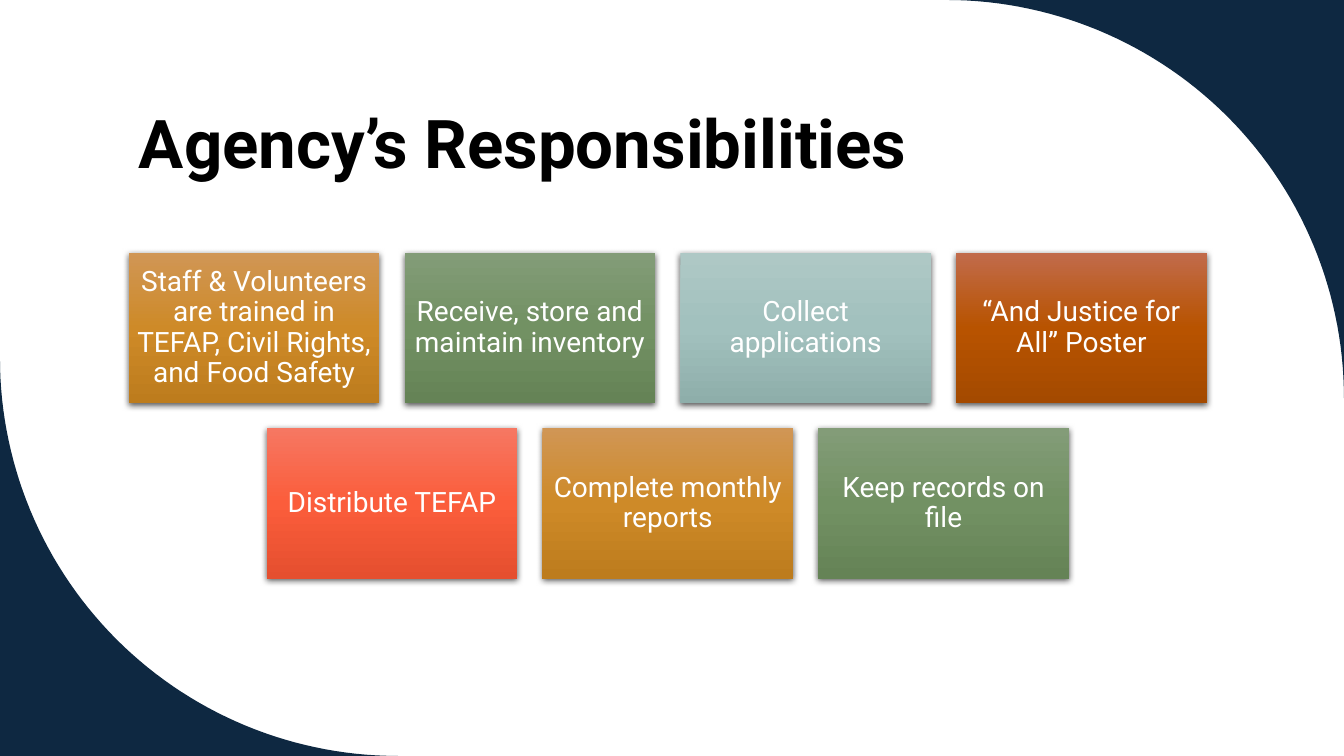
from copy import deepcopy
from dataclasses import dataclass
from math import cos, pi, sin

from lxml import etree
from pptx import Presentation
from pptx import util as u
from pptx.dml.color import RGBColor
from pptx.enum import shapes, text
from pptx.oxml.ns import qn


@dataclass(frozen=True)
class Theme:
    font: str = "Roboto"
    title_size: int = 48
    card_size: int = 20
    line_spacing: float = 0.9
    title: str = "000000"
    card_text: str = "FFFFFF"
    corner: str = "0E2841"
    shadow: str = "000000"
    # Card gradients, top to bottom
    amber: tuple[str, ...] = ("D09655", "CE8A28", "BD7C1D")
    green: tuple[str, ...] = ("839C78", "729163", "658356")
    teal: tuple[str, ...] = ("AEC8C5", "A2C1BE", "8EAEAA")
    rust: tuple[str, ...] = ("C16B4B", "B85300", "A44A00")
    coral: tuple[str, ...] = ("F67762", "FB5D3B", "E54F2F")


@dataclass(frozen=True)
class Card:
    label: str
    gradient: tuple[str, ...]


@dataclass(frozen=True)
class Corner:
    x: float  # outer corner of the slide
    y: float
    inward_x: int  # direction towards the slide centre
    inward_y: int


THEME = Theme()

# Sizes in centimetres
SLIDE_W, SLIDE_H = 33.87, 19.05
CORNER_RADIUS, ARC_STEPS = 10.03, 60
CARD_W, CARD_H, CARD_GAP = 6.32, 3.79, 0.63
CARDS_TOP, CARDS_CENTRE = 6.37, 16.83
CARD_INSET = 0.2

CORNERS = [Corner(SLIDE_W, 0, -1, 1), Corner(0, SLIDE_H, 1, -1)]

ROWS = [
    [
        Card("Staff & Volunteers are trained in TEFAP, Civil Rights, and Food Safety", THEME.amber),
        Card("Receive, store and maintain inventory", THEME.green),
        Card("Collect applications", THEME.teal),
        Card("“And Justice for All” Poster", THEME.rust),
    ],
    [
        Card("Distribute TEFAP", THEME.coral),
        Card("Complete monthly reports", THEME.amber),
        Card("Keep records on file", THEME.green),
    ],
]


def write_text(tf, label: str, size: int, color: str, align, anchor, bold: bool = False) -> None:
    tf.word_wrap = True
    tf.vertical_anchor = anchor
    p = tf.paragraphs[0]
    p.text = label
    p.alignment = align
    p.line_spacing = THEME.line_spacing
    p.font.name = THEME.font
    p.font.size = u.Pt(size)
    p.font.bold = bold
    p.font.color.rgb = RGBColor.from_string(color)


def set_gradient(sp, colors: tuple[str, ...]) -> None:
    sp.fill.gradient()
    sp.fill.gradient_angle = 270
    stop_list = sp._element.spPr.find(".//" + qn("a:gsLst"))
    while len(stop_list) < len(colors):
        stop_list.append(deepcopy(stop_list[0]))
    for i, (stop, color) in enumerate(zip(sp.fill.gradient_stops, colors)):
        stop.position = i / (len(colors) - 1)
        stop.color.rgb = RGBColor.from_string(color)


def set_shadow(sp) -> None:
    sp.shadow.inherit = False
    effects = sp._element.spPr.find(qn("a:effectLst"))
    shadow = etree.SubElement(
        effects, qn("a:outerShdw"), blurRad=str(u.Pt(4.5)), dist=str(u.Pt(1.5)),
        dir="5400000", algn="ctr", rotWithShape="0",
    )
    color = etree.SubElement(shadow, qn("a:srgbClr"), val=THEME.shadow)
    etree.SubElement(color, qn("a:alpha"), val="63000")


def draw_corner(s, corner: Corner) -> None:
    """Fill the area between a slide corner and a quarter circle."""
    angles = [pi / 2 * i / ARC_STEPS for i in range(ARC_STEPS + 1)]
    arc = [
        (u.Cm(corner.x + corner.inward_x * CORNER_RADIUS * (1 - sin(a))),
         u.Cm(corner.y + corner.inward_y * CORNER_RADIUS * (1 - cos(a))))
        for a in angles
    ]
    builder = s.shapes.build_freeform(u.Cm(corner.x), u.Cm(corner.y))
    builder.add_line_segments(arc, close=True)
    sp = builder.convert_to_shape()
    sp.shadow.inherit = False
    sp.fill.solid()
    sp.fill.fore_color.rgb = RGBColor.from_string(THEME.corner)
    sp.line.fill.background()


def draw_card(s, card: Card, left: float, top: float) -> None:
    sp = s.shapes.add_shape(
        shapes.MSO_SHAPE.RECTANGLE, u.Cm(left), u.Cm(top), u.Cm(CARD_W), u.Cm(CARD_H)
    )
    set_gradient(sp, card.gradient)
    sp.line.fill.background()
    set_shadow(sp)
    tf = sp.text_frame
    tf.margin_left = tf.margin_right = tf.margin_top = tf.margin_bottom = u.Cm(CARD_INSET)
    write_text(tf, card.label, THEME.card_size, THEME.card_text,
               text.PP_ALIGN.CENTER, text.MSO_ANCHOR.MIDDLE)


def main() -> None:
    prs = Presentation()
    prs.slide_width, prs.slide_height = u.Cm(SLIDE_W), u.Cm(SLIDE_H)
    s = prs.slides.add_slide(prs.slide_layouts[6])

    # Rounded corners
    for corner in CORNERS:
        draw_corner(s, corner)

    # Title
    title = s.shapes.add_textbox(u.Cm(3.25), u.Cm(1.07), u.Cm(27.15), u.Cm(3.68))
    write_text(title.text_frame, "Agency’s Responsibilities", THEME.title_size, THEME.title,
               text.PP_ALIGN.LEFT, text.MSO_ANCHOR.BOTTOM, bold=True)

    # Centred rows of cards
    for i, row in enumerate(ROWS):
        row_width = len(row) * (CARD_W + CARD_GAP) - CARD_GAP
        left = CARDS_CENTRE - row_width / 2
        for j, card in enumerate(row):
            draw_card(s, card, left + j * (CARD_W + CARD_GAP),
                      CARDS_TOP + i * (CARD_H + CARD_GAP))

    prs.save("out.pptx")


if __name__ == "__main__":
    main()
